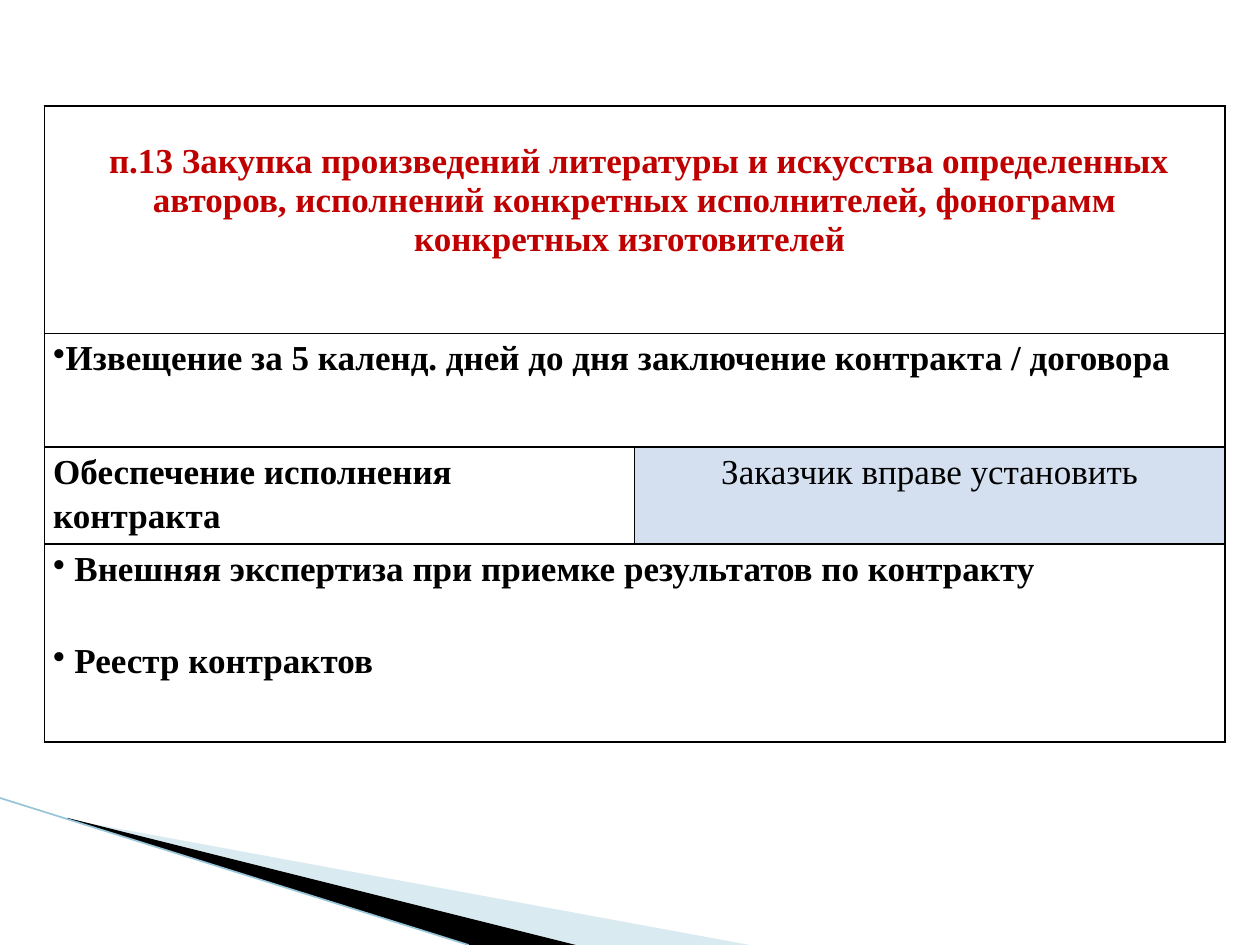
import pptx
import pptx.dml.color
import pptx.enum.shapes
import pptx.enum.text
import pptx.oxml
import pptx.oxml.ns
import pptx.util

Pt = pptx.util.Pt
RGB = pptx.dml.color.RGBColor
ALIGN = pptx.enum.text.PP_ALIGN
BLACK = RGB(0x00, 0x00, 0x00)
RED = RGB(0xC0, 0x00, 0x00)
BLUE = RGB(0xD4, 0xDF, 0xEF)
PALE = RGB(0xA0, 0xCB, 0xDC)
TEAL = RGB(0x97, 0xC5, 0xD8)


def node(parent, tag, **attrs):
    child = pptx.oxml.parse_xml(f"<a:{tag} {pptx.oxml.ns.nsdecls('a')}/>")
    for key, value in attrs.items():
        child.set(key, str(value))
    parent.append(child)
    return child


class Deck:
    font = "Times New Roman"
    size = 20
    inset = 5.04

    def __init__(self, wide, high):
        self.file = pptx.Presentation()
        self.file.slide_width, self.file.slide_height = Pt(wide), Pt(high)
        self.slide = self.file.slides.add_slide(self.file.slide_layouts[6])

    def wedge(self, points, color, alpha=None):
        spots = [(Pt(x), Pt(y)) for x, y in points]
        build = self.slide.shapes.build_freeform(*spots[0], scale=1.0)
        build.add_line_segments(spots[1:], close=True)
        shape = build.convert_to_shape()
        shape.shadow.inherit = False
        shape.line.fill.background()
        shape.fill.solid()
        shape.fill.fore_color.rgb = color
        if alpha:
            tint = shape._element.spPr.find(".//" + pptx.oxml.ns.qn("a:srgbClr"))
            node(tint, "alpha", val=alpha * 1000)

    def line(self, start, end, color, width):
        kind = pptx.enum.shapes.MSO_CONNECTOR.STRAIGHT
        link = self.slide.shapes.add_connector(kind, *map(Pt, start + end))
        link.line.color.rgb = color
        link.line.width = Pt(width)
        node(link._element.spPr, "effectLst")

    def table(self, left, top, cols, rows):
        frame = self.slide.shapes.add_table(
            len(rows), len(cols), Pt(left), Pt(top), Pt(sum(cols)), Pt(sum(rows)))
        grid = frame.table
        for col, width in zip(grid.columns, cols):
            col.width = Pt(width)
        for row, height in zip(grid.rows, rows):
            row.height = Pt(height)
        for cell in grid.iter_cells():
            self.border(cell)
            cell.fill.background()
            cell.margin_left = cell.margin_right = Pt(self.inset)
            cell.margin_top = cell.margin_bottom = 0
        return grid

    def border(self, cell):
        props = cell._tc.get_or_add_tcPr()
        for side in ("lnL", "lnR", "lnT", "lnB"):
            edge = node(props, side, w=Pt(1))
            node(node(edge, "solidFill"), "srgbClr", val=BLACK)

    def label(self, cell, lines, color=BLACK, bold=True, center=False,
              bullet=False, pitch=1.15, gap=0):
        cell.text_frame.text = "\n".join(lines)
        for i, para in enumerate(cell.text_frame.paragraphs):
            para.alignment = ALIGN.CENTER if center else ALIGN.LEFT
            para.line_spacing = pitch
            if i:
                para.space_before = Pt(gap)
            if bullet:
                node(para._p.get_or_add_pPr(), "buChar", char="•")
            for run in para.runs:
                run.font.name = self.font
                run.font.size = Pt(self.size)
                run.font.bold = bold
                run.font.color.rgb = color


def main():
    deck = Deck(720, 540)
    deck.wedge([(39.6, 468.4), (428.4, 540), (328.3, 540), (39.6, 468)], PALE, 40)
    deck.wedge([(38.2, 467.3), (329, 540), (268, 540), (38.9, 468)], BLACK)
    deck.line((0, 456), (267.8, 540), TEAL, 0.95)

    grid = deck.table(25.4, 60.5, [337.2, 337.4], [130, 65, 55.4, 113])
    for row in (0, 1, 3):
        grid.cell(row, 0).merge(grid.cell(row, 1))

    title = grid.cell(0, 0)
    title.margin_top = Pt(21)
    deck.label(title, [
        " п.13 Закупка произведений литературы и искусства определенных "
        "авторов, исполнений конкретных исполнителей, фонограмм "
        "конкретных изготовителей \t"], color=RED, center=True, pitch=1.0)
    deck.label(grid.cell(1, 0), [
        "Извещение за 5 календ. дней до дня заключение контракта / договора"],
        bullet=True)
    deck.label(grid.cell(2, 0), ["Обеспечение исполнения контракта"])
    right = grid.cell(2, 1)
    right.fill.solid()
    right.fill.fore_color.rgb = BLUE
    deck.label(right, ["Заказчик вправе установить"], bold=False, center=True)
    deck.label(grid.cell(3, 0), [
        " Внешняя экспертиза при приемке результатов по контракту",
        " Реестр контрактов"], bullet=True, gap=27)
    deck.file.save("out.pptx")


if __name__ == "__main__":
    main()
